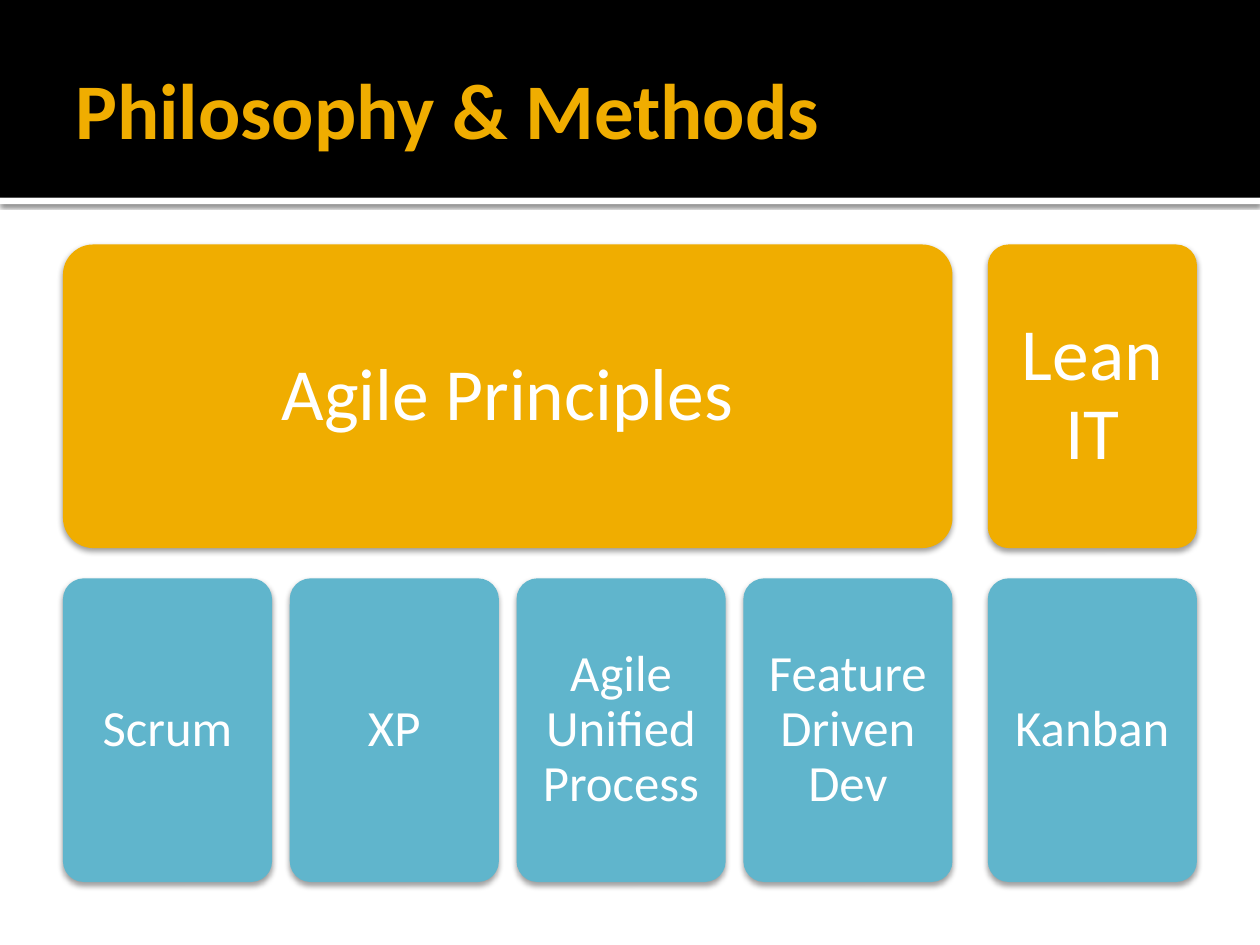
from lxml import etree
from pptx import Presentation
from pptx.dml.color import RGBColor
from pptx.enum.shapes import MSO_SHAPE
from pptx.enum.text import MSO_ANCHOR, PP_ALIGN
from pptx.oxml.ns import qn
from pptx.util import Inches, Pt

RECTANGLE = MSO_SHAPE.RECTANGLE
ROUNDED = MSO_SHAPE.ROUNDED_RECTANGLE
MIDDLE = MSO_ANCHOR.MIDDLE
CENTER = PP_ALIGN.CENTER

BLACK = RGBColor(0x00, 0x00, 0x00)
WHITE = RGBColor(0xFF, 0xFF, 0xFF)
AMBER = RGBColor(0xF0, 0xAD, 0x00)
TEAL = RGBColor(0x60, 0xB5, 0xCC)

FONT = "Calibri"
LEFT, CARD_WIDTH, CARD_HEIGHT = 0.5, 1.66, 2.41
METHOD_GAP, GROUP_GAP = 0.14, 0.28
PHILOSOPHY_TOP, METHOD_TOP = 1.94, 4.59

GROUPS = [
    ("Agile Principles",
     ["Scrum", "XP", "Agile Unified Process", "Feature Driven Dev"]),
    ("Lean IT", ["Kanban"]),
]


def add_block(slide, preset, left, top, width, height, color):
    block = slide.shapes.add_shape(
        preset, Inches(left), Inches(top), Inches(width), Inches(height))
    block.fill.solid()
    block.fill.fore_color.rgb = color
    block.line.fill.background()
    block.shadow.inherit = False
    return block


def drop_shadow(block, opacity, blur, distance):
    """Cast a black shadow straight down; opacity in percent, lengths in points."""
    effects = block._element.spPr.find(qn("a:effectLst"))
    shadow = etree.SubElement(
        effects, qn("a:outerShdw"), blurRad=str(Pt(blur)),
        dist=str(Pt(distance)), dir="5400000", rotWithShape="0")
    color = etree.SubElement(shadow, qn("a:srgbClr"), val=str(BLACK))
    etree.SubElement(color, qn("a:alpha"), val=str(opacity * 1000))


def write(block, text, size, color, insets):
    """Fill in one paragraph; insets are left, top, right, bottom in inches."""
    frame = block.text_frame
    frame.word_wrap = True
    frame.vertical_anchor = MIDDLE
    (frame.margin_left, frame.margin_top,
     frame.margin_right, frame.margin_bottom) = map(Inches, insets)
    paragraph = frame.paragraphs[0]
    paragraph.text = text
    paragraph.font.name = FONT
    paragraph.font.size = Pt(size)
    paragraph.font.color.rgb = color
    return paragraph


def add_header(slide, title):
    rule = add_block(slide, RECTANGLE, 0, 1.57, 10, 0.05, WHITE)
    drop_shadow(rule, 60, 2.5, 0.8)
    add_block(slide, RECTANGLE, 0, 0, 10, 1.57, BLACK)
    heading = slide.shapes.add_textbox(
        Inches(0.5), Inches(0.17), Inches(9), Inches(1.37))
    paragraph = write(heading, title, 45, AMBER, (0.1, 0.05, 0.05, 0.05))
    paragraph.font.bold = True


def add_card(slide, text, left, top, width, color, size, inset):
    card = add_block(slide, ROUNDED, left, top, width, CARD_HEIGHT, color)
    card.adjustments[0] = 0.1
    drop_shadow(card, 38, 3.5, 2)
    paragraph = write(card, text, size, WHITE, [inset] * 4)
    paragraph.alignment = CENTER
    paragraph.line_spacing = 0.9


def add_group(slide, philosophy, methods, left):
    """Draw a philosophy above its methods and return the group's width."""
    step = CARD_WIDTH + METHOD_GAP
    width = len(methods) * step - METHOD_GAP
    add_card(slide, philosophy, left, PHILOSOPHY_TOP, width, AMBER, 42, 0.17)
    for column, method in enumerate(methods):
        add_card(slide, method, left + column * step, METHOD_TOP,
                 CARD_WIDTH, TEAL, 29, 0.12)
    return width


def main():
    deck = Presentation()
    deck.slide_width, deck.slide_height = Inches(10), Inches(7.5)
    slide = deck.slides.add_slide(deck.slide_layouts[6])
    add_header(slide, "Philosophy & Methods")
    left = LEFT
    for philosophy, methods in GROUPS:
        left += add_group(slide, philosophy, methods, left) + GROUP_GAP
    deck.save("out.pptx")


if __name__ == "__main__":
    main()
